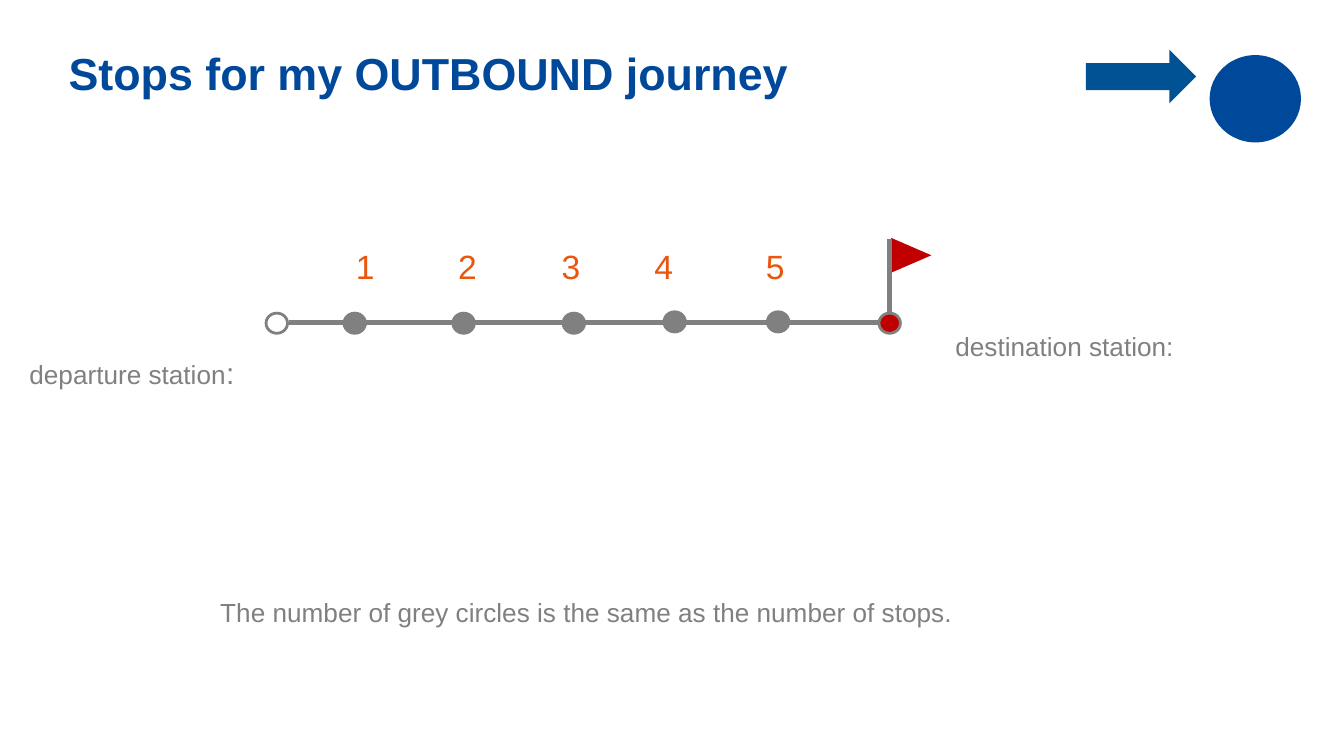
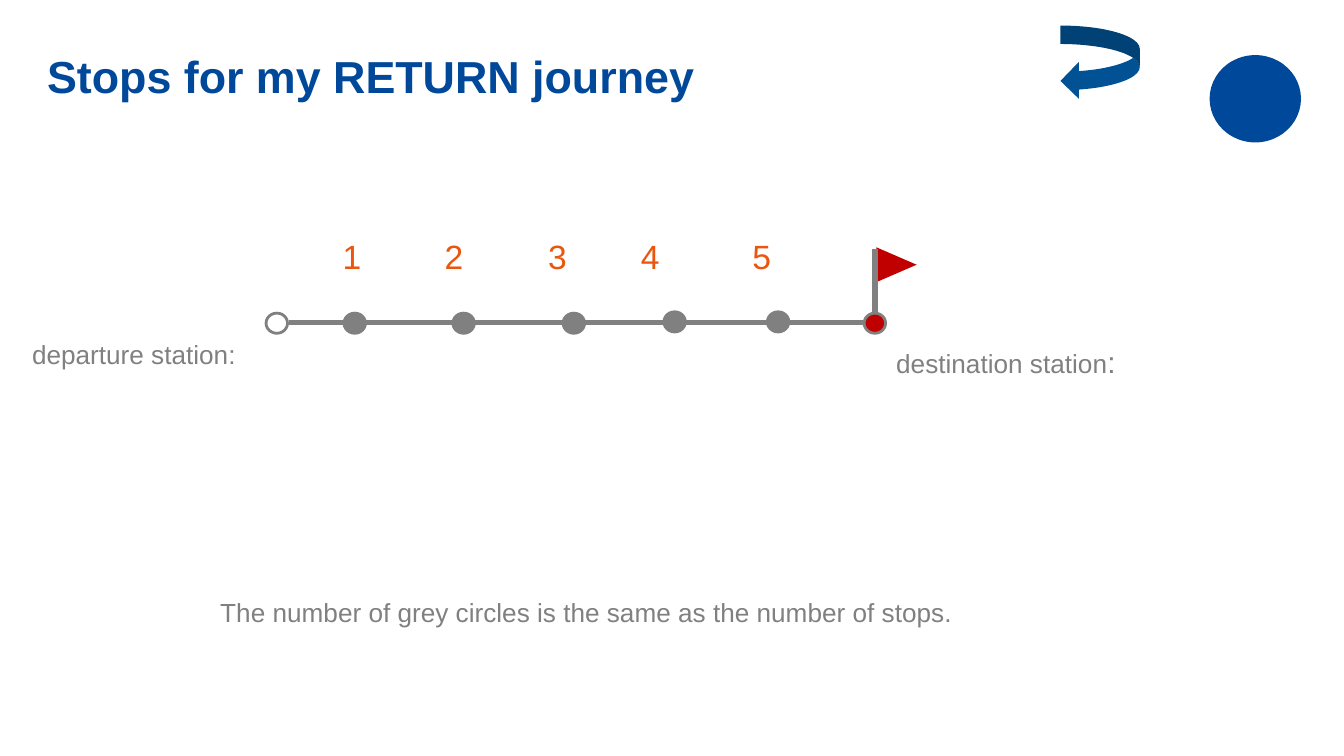
from lxml import etree
from pptx import Presentation
from pptx.dml.color import RGBColor
from pptx.enum.shapes import MSO_CONNECTOR, MSO_SHAPE
from pptx.enum.text import MSO_ANCHOR, MSO_AUTO_SIZE, PP_ALIGN
from pptx.oxml.ns import qn
from pptx.util import Inches, Pt

BLUE = RGBColor(0x00, 0x48, 0x99)
ARROW = RGBColor(0x00, 0x52, 0x94)
GREY = RGBColor(0x80, 0x80, 0x80)
RED = RGBColor(0xC0, 0x00, 0x00)
ORANGE = RGBColor(0xEA, 0x56, 0x0D)
WHITE = RGBColor(0xFF, 0xFF, 0xFF)

STRAIGHT = MSO_CONNECTOR.STRAIGHT
DOT = MSO_SHAPE.FLOWCHART_CONNECTOR
OVAL = MSO_SHAPE.OVAL
FLAG = MSO_SHAPE.ISOSCELES_TRIANGLE
RIGHT = MSO_SHAPE.RIGHT_ARROW
BACK = MSO_SHAPE.CURVED_LEFT_ARROW
TOP = MSO_ANCHOR.TOP
LEFT = PP_ALIGN.LEFT
FIXED = MSO_AUTO_SIZE.NONE

FONT = "Arial"
DOT_W, DOT_H = 0.16, 0.15
# Offsets of the stops from the start of the route
STOPS = [(0.58, 0), (1.39, 0), (2.21, 0), (2.96, -0.01), (3.73, -0.01)]
TABS = [0.76, 1.53, 2.22, 3.05]
NOTE = "The number of grey circles is the same as the number of stops."


def style(run, size, color, bold=False):
    font = run.font
    font.name, font.size, font.bold = FONT, Pt(size), bold
    font.color.rgb = color


def add_form(slide, kind, box, fill, edge=None):
    form = slide.shapes.add_shape(kind, *map(Inches, box))
    form.shadow.inherit = False
    form.fill.solid()
    form.fill.fore_color.rgb = fill
    if edge is None:
        form.line.fill.background()
    else:
        form.line.color.rgb = edge
        form.line.width = Pt(1.5)
    return form


def add_line(slide, *ends):
    line = slide.shapes.add_connector(STRAIGHT, *map(Inches, ends))
    line.line.color.rgb = GREY
    line.line.width = Pt(3)
    etree.SubElement(line._element.spPr, qn("a:effectLst"))


def add_text(slide, box, parts, color=GREY, tabs=()):
    """Write (text, size) parts as one paragraph."""
    frame = slide.shapes.add_textbox(*map(Inches, box)).text_frame
    frame.word_wrap = True
    para = frame.paragraphs[0]
    if tabs:
        stops = etree.SubElement(para._p.get_or_add_pPr(), qn("a:tabLst"))
        for pos in tabs:
            etree.SubElement(stops, qn("a:tab"), pos=str(Inches(pos)), algn="l")
    for text, size in parts:
        run = para.add_run()
        run.text = text
        style(run, size, color)


def add_title(slide, left, top, text):
    title = slide.shapes.title
    title.left, title.top = Inches(left), Inches(top)
    title.width, title.height = Inches(8.91), Inches(0.78)
    frame = title.text_frame
    frame.text = text
    frame.auto_size = FIXED
    frame.vertical_anchor = TOP
    frame.margin_top = Inches(0.05)
    para = frame.paragraphs[0]
    para.alignment = LEFT
    style(para.runs[0], 24, BLUE, True)


def add_route(slide, left, top, span, rise):
    """Draw the line, its stops and a flag that stands rise above it."""
    goal, mid = left + span, top + 0.07
    pole, peak = goal + 0.08, top - rise
    # Flag and pole
    add_form(slide, FLAG, (goal + 0.11, peak, 0.26, 0.3), RED).rotation = 90
    add_line(slide, pole, peak + 0.03, pole, mid)
    # Track and stations
    add_line(slide, left + 0.17, mid, goal + 0.02, mid)
    for dx, dy in STOPS:
        add_form(slide, DOT, (left + dx, top + dy, DOT_W, DOT_H), GREY, GREY)
    add_form(slide, DOT, (goal, top, DOT_W, DOT_H), RED, GREY)
    add_form(slide, DOT, (left, top, DOT_W, DOT_H), WHITE, GREY)


def add_trip(deck, title, arrow, route, digits, start, end):
    slide = deck.slides.add_slide(deck.slide_layouts[5])
    add_title(slide, *title)
    # Direction sign and round badge
    add_form(slide, *arrow, ARROW)
    add_form(slide, OVAL, (9, 0.41, 0.68, 0.65), BLUE)
    add_route(slide, 1.98, 2.33, *route)
    # Stop numbers and labels
    add_text(slide, digits, [("1\t2\t3\t4\t5", 18)], ORANGE, TABS)
    add_text(slide, *start)
    add_text(slide, *end)
    add_text(slide, (1.54, 4.39, 6.38, 0.57), [(NOTE, 14)])


def main():
    deck = Presentation()
    # Wide format, 16 to 9
    deck.slide_width = Inches(10)
    deck.slide_height = Inches(10) * 9 // 16
    add_trip(
        deck,
        title=(0.41, 0.29, "Stops for my OUTBOUND journey"),
        arrow=(RIGHT, (8.08, 0.37, 0.82, 0.4)),
        route=(4.56, 0.58),
        digits=(2.55, 1.78, 3.7, 0.4),
        start=((0.12, 2.59, 3.72, 0.37), [("departure station", 14), (":", 16)]),
        end=((7.01, 2.41, 2.15, 0.61), [("destination station:", 14)]),
    )
    add_trip(
        deck,
        title=(0.25, 0.31, "Stops for my RETURN journey"),
        arrow=(BACK, (7.89, 0.19, 0.59, 0.55)),
        route=(4.45, 0.51),
        digits=(2.45, 1.71, 4.99, 0.4),
        start=((0.14, 2.47, 2.57, 0.57), [("departure station:", 14)]),
        end=((6.57, 2.51, 2.26, 0.64), [("destination station", 14), (":", 16)]),
    )
    deck.save("out.pptx")


if __name__ == "__main__":
    main()
